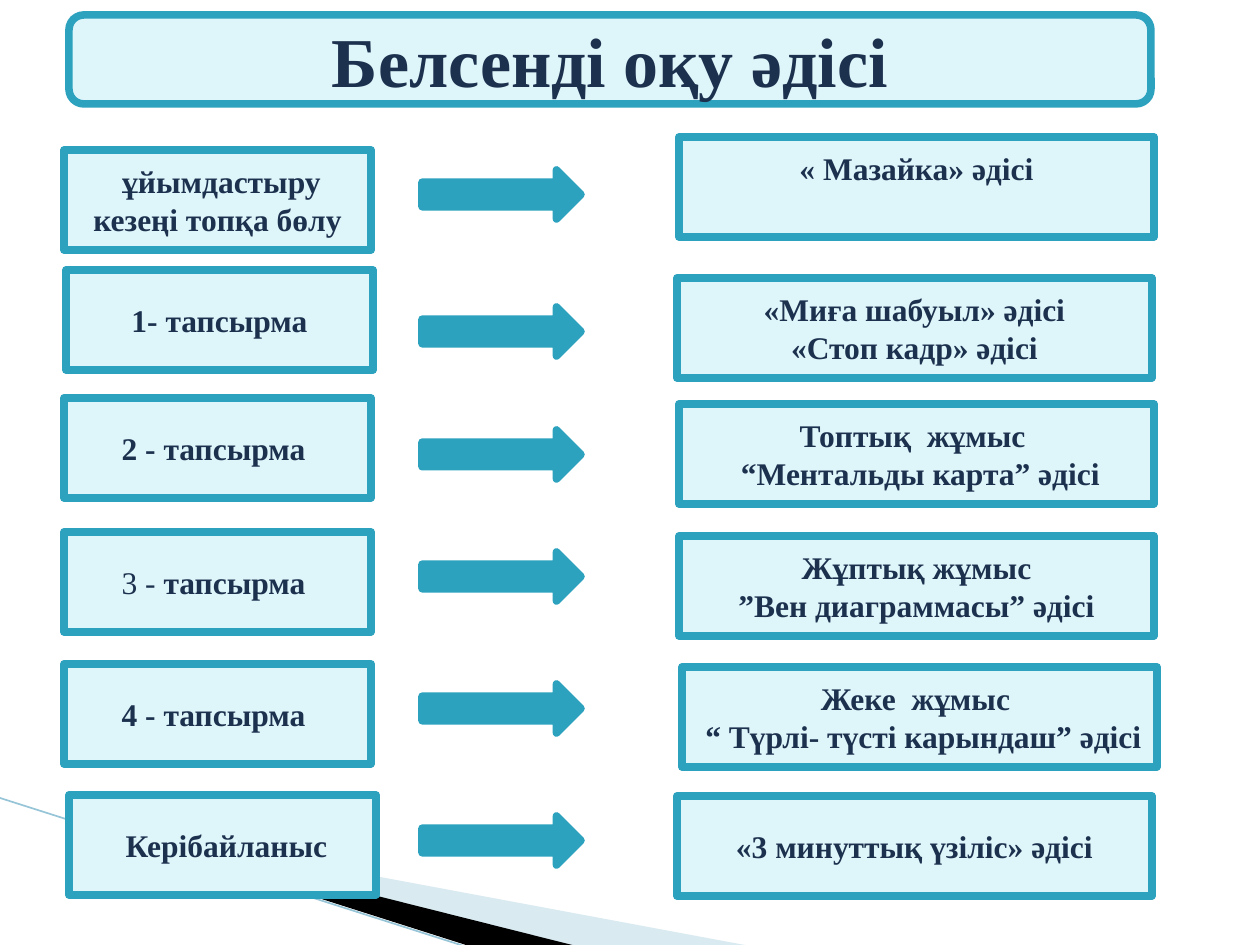
from lxml.etree import SubElement
from pptx import Presentation
from pptx.dml.color import RGBColor
from pptx.enum.shapes import MSO_CONNECTOR, MSO_SHAPE
from pptx.enum.text import MSO_ANCHOR, PP_ALIGN
from pptx.oxml.ns import qn
from pptx.util import Emu, Pt

PX_PER_INCH = 126
TEAL, PALE, NAVY = "2DA2BF", "DEF5FA", "1C314E"
BORDER = 4.33
STEP_SIZE, METHOD_SIZE, ARROW_SIZE = (307, 100), (475, 100), (159, 49)
ARROW_LEFT = 422
METHOD_TEXT_TOP = 12

STEPS = [
    ((64, 150), [" ұйымдастыру кезеңі топқа бөлу"]),
    ((66, 270), ["1- тапсырма"]),
    ((64, 398), ["2 - тапсырма "]),
    ((64, 532), ["3 - ", "тапсырма "]),
    ((64, 664), ["4 - тапсырма "]),
    ((69, 795), [" Керібайланыс"]),
]
ARROW_TOPS = [170, 307, 430, 552, 684, 816]
METHODS = [
    ((679, 137), ["« Мазайка» әдісі"]),
    ((677, 278), ["«Миға шабуыл» әдісі", "«Стоп кадр» әдісі"]),
    ((679, 404), ["Топтық  жұмыс ", " “Ментальды карта” әдісі"]),
    ((679, 536), ["Жұптық жұмыс", "”Вен диаграммасы” әдісі"]),
    ((682, 667), ["Жеке  жұмыс ", " “ Түрлі- түсті карындаш” әдісі"]),
    ((677, 796), ["«3 минуттық үзіліс» әдісі"]),
]


def px(length):
    """Turn whole pixels into EMU."""
    return Emu(round(length * 914400 / PX_PER_INCH))


def color(hex_code):
    """Turn a hex string into a colour."""
    return RGBColor.from_string(hex_code)


def paint(shape, fill):
    """Give a shape a solid fill and no shadow."""
    shape.shadow.inherit = False
    shape.fill.solid()
    shape.fill.fore_color.rgb = color(fill)


def add_outlined(slide, preset, corner, size, fill):
    """Add a preset shape with the teal border."""
    outlined = slide.shapes.add_shape(preset, *map(px, corner + size))
    paint(outlined, fill)
    outlined.line.color.rgb = color(TEAL)
    outlined.line.width = Pt(BORDER)
    return outlined


def write_run(paragraph, text, points, bold=True):
    """Append one formatted run."""
    run = paragraph.add_run()
    run.text = text
    style = {"name": "Times New Roman", "size": Pt(points), "bold": bold}
    for attribute, value in style.items():
        setattr(run.font, attribute, value)
    run.font.color.rgb = color(NAVY)


def add_panel(slide, corner, size, lines, points=18, preset=MSO_SHAPE.RECTANGLE):
    """Add a pale panel with centred paragraphs, each a list of runs."""
    panel = add_outlined(slide, preset, corner, size, PALE)
    frame = panel.text_frame
    layout = {"word_wrap": True, "vertical_anchor": MSO_ANCHOR.MIDDLE}
    for attribute, value in layout.items():
        setattr(frame, attribute, value)
    for index, runs in enumerate(lines):
        paragraph = frame.add_paragraph() if index else frame.paragraphs[0]
        paragraph.alignment = PP_ALIGN.CENTER
        for position, text in enumerate(runs, 1):
            write_run(paragraph, text, points, bold=position == len(runs))
    return panel


def add_wedge(slide, corners, fill, opacity=100):
    """Add a filled outline without a border."""
    builder = slide.shapes.build_freeform(*map(px, corners[0]), scale=1.0)
    builder.add_line_segments([tuple(map(px, point)) for point in corners[1:]])
    wedge = builder.convert_to_shape()
    paint(wedge, fill)
    wedge.line.fill.background()
    if opacity < 100:
        tint = wedge._element.spPr.find(qn("a:solidFill"))[0]
        SubElement(tint, qn("a:alpha"), val=str(opacity * 1000))


def add_edge_line(slide, start, end):
    """Add the thin line along the corner decoration."""
    edge = slide.shapes.add_connector(MSO_CONNECTOR.STRAIGHT, *map(px, start + end))
    edge.line.color.rgb = color("97C5D8")
    edge.line.width = Pt(0.95)
    SubElement(edge._element.spPr, qn("a:effectLst"))


def main():
    """Build and save the slide."""
    deck = Presentation()
    deck.slide_width, deck.slide_height = px(1260), px(945)
    slide = deck.slides.add_slide(deck.slide_layouts[6])

    add_wedge(slide, [(69, 819), (750, 946), (575, 946)], "A0CBDC", 40)
    add_wedge(slide, [(67, 818), (576, 946), (469, 946)], "000000")
    add_edge_line(slide, (0, 798), (467, 947))

    add_panel(slide, (69, 15), (1082, 89), [["Белсенді оқу әдісі"]], 40,
              MSO_SHAPE.ROUNDED_RECTANGLE)
    for (step_corner, step), arrow_top, (method_corner, method) in zip(
            STEPS, ARROW_TOPS, METHODS):
        add_panel(slide, step_corner, STEP_SIZE, [step])
        add_outlined(slide, MSO_SHAPE.RIGHT_ARROW, (ARROW_LEFT, arrow_top),
                     ARROW_SIZE, TEAL)
        panel = add_panel(slide, method_corner, METHOD_SIZE, [[line] for line in method])
        if arrow_top == ARROW_TOPS[0]:
            panel.text_frame.vertical_anchor = MSO_ANCHOR.TOP
            panel.text_frame.margin_top = px(METHOD_TEXT_TOP)

    deck.save("out.pptx")


if __name__ == "__main__":
    main()
